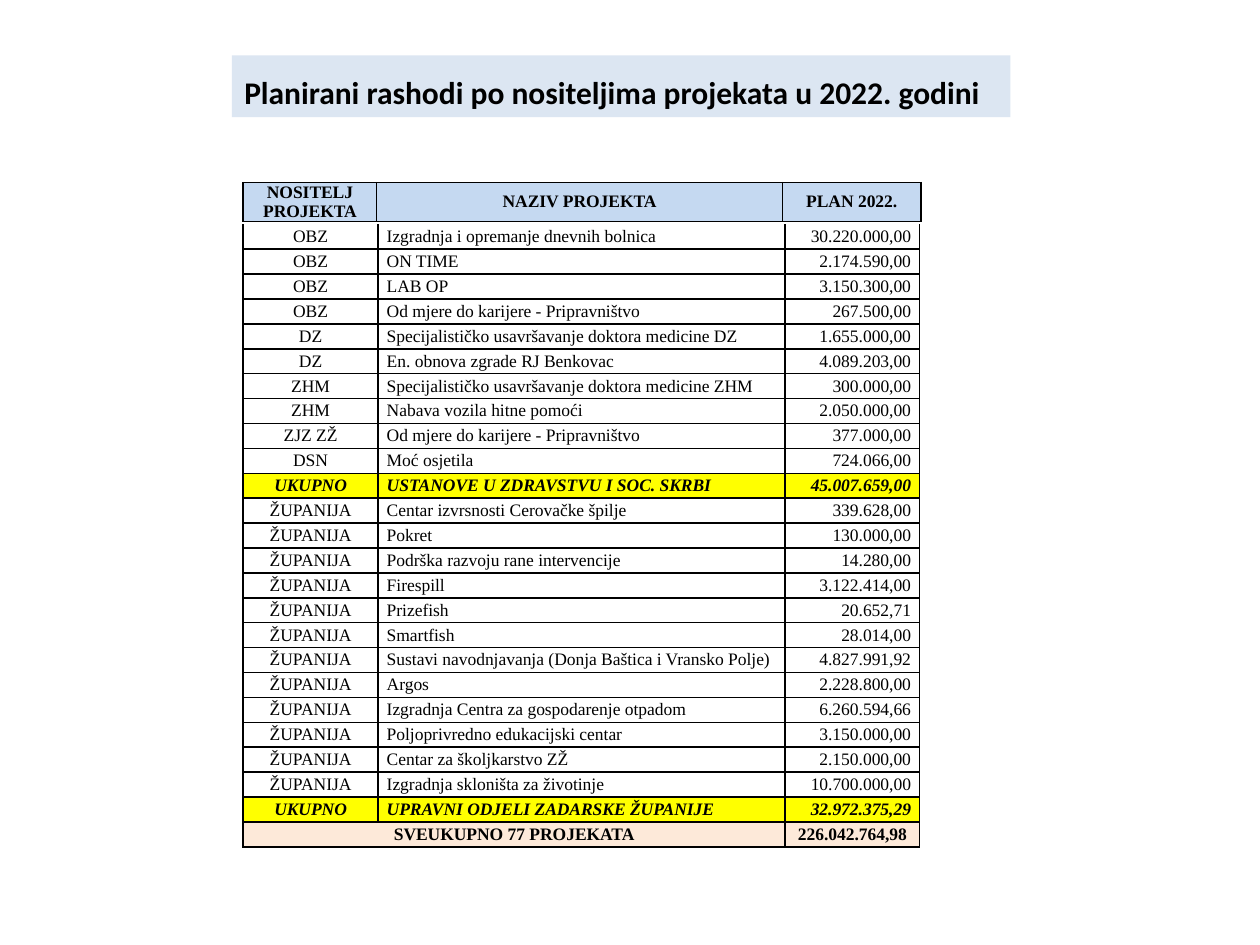
from lxml import etree
from pptx import Presentation
from pptx.dml.color import RGBColor
from pptx.enum.shapes import MSO_SHAPE
from pptx.enum.text import MSO_ANCHOR, PP_ALIGN
from pptx.oxml.ns import qn
from pptx.util import Inches, Pt

RECTANGLE = MSO_SHAPE.RECTANGLE
MIDDLE = MSO_ANCHOR.MIDDLE
LEFT, CENTER, RIGHT = PP_ALIGN.LEFT, PP_ALIGN.CENTER, PP_ALIGN.RIGHT

BLACK = RGBColor(0x00, 0x00, 0x00)
WHITE = RGBColor(0xFF, 0xFF, 0xFF)
TITLE_BLUE = RGBColor(0xDC, 0xE6, 0xF2)
HEADER_BLUE = RGBColor(0xC5, 0xD9, 0xF1)
YELLOW = RGBColor(0xFF, 0xFF, 0x00)
PEACH = RGBColor(0xFD, 0xE9, 0xD9)

HEADER = ("NOSITELJ PROJEKTA", "NAZIV PROJEKTA", "PLAN 2022.")
SUBTOTAL = "UKUPNO"
PROJECTS = [
    ("OBZ", "Izgradnja i opremanje dnevnih bolnica", "30.220.000,00"),
    ("OBZ", "ON TIME", "2.174.590,00"),
    ("OBZ", "LAB OP", "3.150.300,00"),
    ("OBZ", "Od mjere do karijere - Pripravništvo", "267.500,00"),
    ("DZ", "Specijalističko usavršavanje doktora medicine DZ", "1.655.000,00"),
    ("DZ", "En. obnova zgrade RJ Benkovac", "4.089.203,00"),
    ("ZHM", "Specijalističko usavršavanje doktora medicine ZHM", "300.000,00"),
    ("ZHM", "Nabava vozila hitne pomoći", "2.050.000,00"),
    ("ZJZ ZŽ", "Od mjere do karijere - Pripravništvo", "377.000,00"),
    ("DSN", "Moć osjetila", "724.066,00"),
    (SUBTOTAL, "USTANOVE U ZDRAVSTVU I SOC. SKRBI", "45.007.659,00"),
    ("ŽUPANIJA", "Centar izvrsnosti Cerovačke špilje", "339.628,00"),
    ("ŽUPANIJA", "Pokret", "130.000,00"),
    ("ŽUPANIJA", "Podrška razvoju rane intervencije", "14.280,00"),
    ("ŽUPANIJA", "Firespill", "3.122.414,00"),
    ("ŽUPANIJA", "Prizefish", "20.652,71"),
    ("ŽUPANIJA", "Smartfish", "28.014,00"),
    ("ŽUPANIJA", "Sustavi navodnjavanja (Donja Baštica i Vransko Polje)", "4.827.991,92"),
    ("ŽUPANIJA", "Argos", "2.228.800,00"),
    ("ŽUPANIJA", "Izgradnja Centra za gospodarenje otpadom", "6.260.594,66"),
    ("ŽUPANIJA", "Poljoprivredno edukacijski centar", "3.150.000,00"),
    ("ŽUPANIJA", "Centar za školjkarstvo ZŽ", "2.150.000,00"),
    ("ŽUPANIJA", "Izgradnja skloništa za životinje", "10.700.000,00"),
    (SUBTOTAL, "UPRAVNI ODJELI ZADARSKE ŽUPANIJE", "32.972.375,29"),
]
TOTAL_LABEL, TOTAL_AMOUNT = "SVEUKUPNO 77 PROJEKATA", "226.042.764,98"


class SlideBuilder:
    title_font = "Calibri"
    table_font = "Times New Roman"
    cell_inset = Inches(0.07)
    border_width = Pt(1)

    def __init__(self, slide):
        self.slide = slide

    def text(self, frame, words, font, size, align, bold=False, italic=False):
        paragraph = frame.paragraphs[0]
        paragraph.alignment = align
        run = paragraph.add_run()
        run.text = words
        run.font.name = font
        run.font.size = Pt(size)
        run.font.bold = bold
        run.font.italic = italic
        run.font.color.rgb = BLACK

    def title_bar(self, left, top, width, height, words):
        shape = self.slide.shapes.add_shape(
            RECTANGLE, Inches(left), Inches(top), Inches(width), Inches(height))
        shape.shadow.inherit = False
        shape.fill.solid()
        shape.fill.fore_color.rgb = TITLE_BLUE
        shape.line.fill.background()
        frame = shape.text_frame
        frame.word_wrap = True
        frame.vertical_anchor = MIDDLE
        frame.margin_top, frame.margin_bottom = Inches(0.13), Inches(0.05)
        self.text(frame, words, self.title_font, 18, LEFT, bold=True)

    def table(self, left, top, widths, row_count, row_height):
        frame = self.slide.shapes.add_table(
            row_count, len(widths), Inches(left), Inches(top),
            Inches(sum(widths)), Inches(row_count * row_height))
        table = frame.table
        table.first_row = table.horz_banding = False
        for column, width in zip(table.columns, widths):
            column.width = Inches(width)
        for row in table.rows:
            row.height = Inches(row_height)
        return table

    def borders(self, cell, sides):
        properties = cell._tc.get_or_add_tcPr()
        for side in "LRTB":
            line = etree.SubElement(properties, qn(f"a:ln{side}"), w=str(self.border_width))
            if side in sides:
                fill = etree.SubElement(line, qn("a:solidFill"))
                etree.SubElement(fill, qn("a:srgbClr"), val=str(BLACK))
            else:
                etree.SubElement(line, qn("a:noFill"))

    def cell(self, cell, words, align, fill, bold=False, italic=False, sides="LRTB"):
        cell.vertical_anchor = MIDDLE
        cell.margin_left = cell.margin_right = self.cell_inset
        cell.margin_top = cell.margin_bottom = 0
        self.borders(cell, sides)
        cell.fill.solid()
        cell.fill.fore_color.rgb = fill
        if words:
            self.text(cell.text_frame, words, self.table_font, 10, align, bold, italic)


def main():
    presentation = Presentation()
    presentation.slide_width, presentation.slide_height = Inches(10), Inches(7.5)
    builder = SlideBuilder(presentation.slides.add_slide(presentation.slide_layouts[6]))

    # Title
    builder.title_bar(1.84, 0.44, 6.18, 0.49,
                      "Planirani rashodi po nositeljima projekata u 2022. godini")

    # Projects, with a highlighted subtotal after each group
    last = len(PROJECTS)
    body = builder.table(1.93, 1.78, (1.07, 3.23, 1.07), last + 1, 4.95 / (last + 1))
    for row, project in enumerate(PROJECTS):
        subtotal = project[0] == SUBTOTAL
        for column, align in enumerate((CENTER, LEFT, RIGHT)):
            builder.cell(body.cell(row, column), project[column], align,
                         YELLOW if subtotal else WHITE, subtotal, subtotal,
                         "LRTB" if row else "LRB")

    # Grand total
    body.cell(last, 0).merge(body.cell(last, 1))
    for column, words in enumerate((TOTAL_LABEL, "", TOTAL_AMOUNT)):
        builder.cell(body.cell(last, column), words, CENTER, PEACH, bold=True)

    # Column headings, a table of their own
    heading = builder.table(1.93, 1.45, (1.06, 3.22, 1.1), 1, 0.24)
    for column, words in enumerate(HEADER):
        builder.cell(heading.cell(0, column), words, CENTER, HEADER_BLUE, bold=True)

    presentation.save("out.pptx")


if __name__ == "__main__":
    main()
